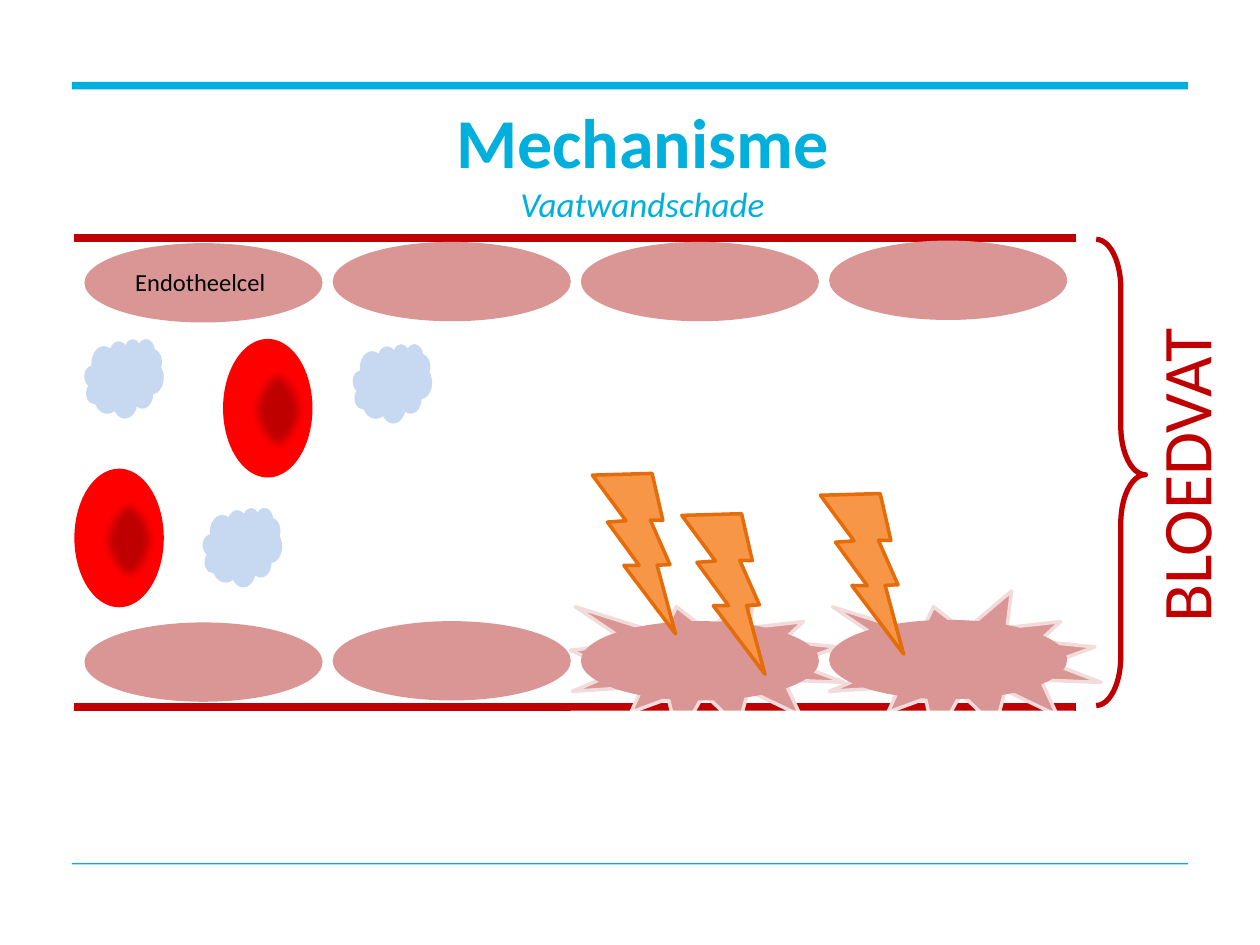
from lxml.etree import SubElement
from pptx import Presentation
from pptx.dml.color import RGBColor
from pptx.enum.shapes import MSO_CONNECTOR, MSO_SHAPE
from pptx.enum.text import MSO_ANCHOR, PP_ALIGN
from pptx.oxml.ns import qn
from pptx.util import Inches, Pt

CYAN = RGBColor(0x00, 0xAF, 0xDC)
DARK_RED = RGBColor(0xC0, 0x00, 0x00)
BLOOD_RED = RGBColor(0xFF, 0x00, 0x00)
CELL_PINK = RGBColor(0xD9, 0x96, 0x94)
PALE_PINK = RGBColor(0xF2, 0xDC, 0xDB)
PLATELET_BLUE = RGBColor(0xC6, 0xD9, 0xF1)
ORANGE = RGBColor(0xF7, 0x96, 0x46)
DARK_ORANGE = RGBColor(0xE4, 0x6C, 0x0A)
WHITE = RGBColor(0xFF, 0xFF, 0xFF)
BLACK = RGBColor(0x00, 0x00, 0x00)

CELL_LEFT, CELL_STEP = 0.67, 1.97
WALL_TOP, WALL_BOTTOM = 1.89, 5.61


def add_figure(shapes, preset, left, top, width, height,
               fill=None, outline=None, weight=2):
    figure = shapes.add_shape(preset, Inches(left), Inches(top),
                              Inches(width), Inches(height))
    figure.shadow.inherit = False
    if fill is None:
        figure.fill.background()
    else:
        figure.fill.solid()
        figure.fill.fore_color.rgb = fill
    if outline is None:
        figure.line.fill.background()
    else:
        figure.line.color.rgb = outline
        figure.line.width = Pt(weight)
    return figure


def add_wall(slide, y):
    wall = slide.shapes.add_connector(MSO_CONNECTOR.STRAIGHT, Inches(0.59), Inches(y),
                                      Inches(8.54), Inches(y))
    wall.line.color.rgb = DARK_RED
    wall.line.width = Pt(4.5)
    SubElement(wall._element.spPr, qn("a:effectLst"))


def add_endothelium(slide, top):
    # The row rises very slightly from left to right
    for column, rise in enumerate((0, 0.01, 0.01, 0.02)):
        add_figure(slide.shapes, MSO_SHAPE.OVAL, CELL_LEFT + column * CELL_STEP,
                   top - rise, 1.89, 0.63, CELL_PINK)


def add_red_blood_cell(slide, left, top):
    blood_cell = slide.shapes.add_group_shape()
    add_figure(blood_cell.shapes, MSO_SHAPE.OVAL, left, top, 0.71, 1.1, BLOOD_RED)
    hollow = add_figure(blood_cell.shapes, MSO_SHAPE.OVAL, left + 0.2, top + 0.21,
                        0.47, 0.71, DARK_RED)
    effects = hollow._element.spPr.find(qn("a:effectLst"))
    SubElement(effects, qn("a:softEdge"), rad=str(Pt(5)))


def add_label(slide, left, top, width, height, lines):
    label = slide.shapes.add_textbox(Inches(left), Inches(top),
                                     Inches(width), Inches(height))
    frame = label.text_frame
    frame.word_wrap = True
    frame.text = "\n".join(text for text, *_ in lines)
    for paragraph, (_, size, color, bold, italic) in zip(frame.paragraphs, lines):
        paragraph.alignment = PP_ALIGN.CENTER
        font = paragraph.runs[0].font
        font.name, font.size = "Calibri", Pt(size)
        font.bold, font.italic = bold, italic
        font.color.rgb = color
    return frame


def main():
    presentation = Presentation()
    presentation.slide_width, presentation.slide_height = Inches(10), Inches(7.5)
    slide = presentation.slides.add_slide(presentation.slide_layouts[6])
    shapes = slide.shapes

    # Page rules
    for top, height in ((0.65, 0.06), (6.85, 0.01)):
        add_figure(shapes, MSO_SHAPE.RECTANGLE, 0.57, top, 8.86, height, CYAN)

    # Vessel walls, with bursts behind the two damaged cells
    add_wall(slide, WALL_BOTTOM)
    for left in (6.57, 4.53):
        add_figure(shapes, MSO_SHAPE.EXPLOSION1, left, 4.69, 2.17, 1.18,
                   CELL_PINK, PALE_PINK)
    add_wall(slide, WALL_TOP)

    # Endothelial cells
    for top in (1.93, 4.94):
        add_endothelium(slide, top)
    add_label(slide, 0.92, 2.07, 1.34, 0.34,
              [("Endotheelcel", 14, BLACK, False, False)])

    # Platelets and red blood cells
    for left, top in ((2.8, 2.73), (1.61, 4.03), (0.67, 2.69)):
        add_figure(shapes, MSO_SHAPE.CLOUD, left, top, 0.63, 0.63, PLATELET_BLUE)
    for left, top in ((0.59, 3.72), (1.77, 2.69)):
        add_red_blood_cell(slide, left, top)

    # Damage to the vessel wall
    for left, top in ((4.52, 3.76), (5.23, 4.08), (6.33, 3.92)):
        bolt = add_figure(shapes, MSO_SHAPE.LIGHTNING_BOLT, left, top, 1.1, 1.1,
                          ORANGE, DARK_ORANGE)
        bolt.rotation = 23

    # Brace and vessel name
    brace = add_figure(shapes, MSO_SHAPE.RIGHT_BRACE, 8.7, 1.9, 0.39, 3.7,
                       outline=DARK_RED, weight=3)
    brace.adjustments[0], brace.adjustments[1] = 0.996, 0.505
    vessel_name = add_label(slide, 9.01, 2.46, 0.88, 2.62,
                            [("BLOEDVAT", 40, DARK_RED, False, False)])
    vessel_name._txBody.bodyPr.set("vert", "vert270")

    # Title and subtitle
    title = add_label(slide, 0.67, 0.99, 8.86, 0.58,
                      [("Mechanisme", 40, CYAN, True, False),
                       ("Vaatwandschade", 20, CYAN, False, True)])
    title.vertical_anchor = MSO_ANCHOR.MIDDLE
    title.margin_left = title.margin_right = 0
    title.margin_top = title.margin_bottom = 0

    # Cover for the burst points below the wall
    add_figure(shapes, MSO_SHAPE.RECTANGLE, 4.53, 5.64, 4, 0.31, WHITE)

    presentation.save("out.pptx")


if __name__ == "__main__":
    main()
